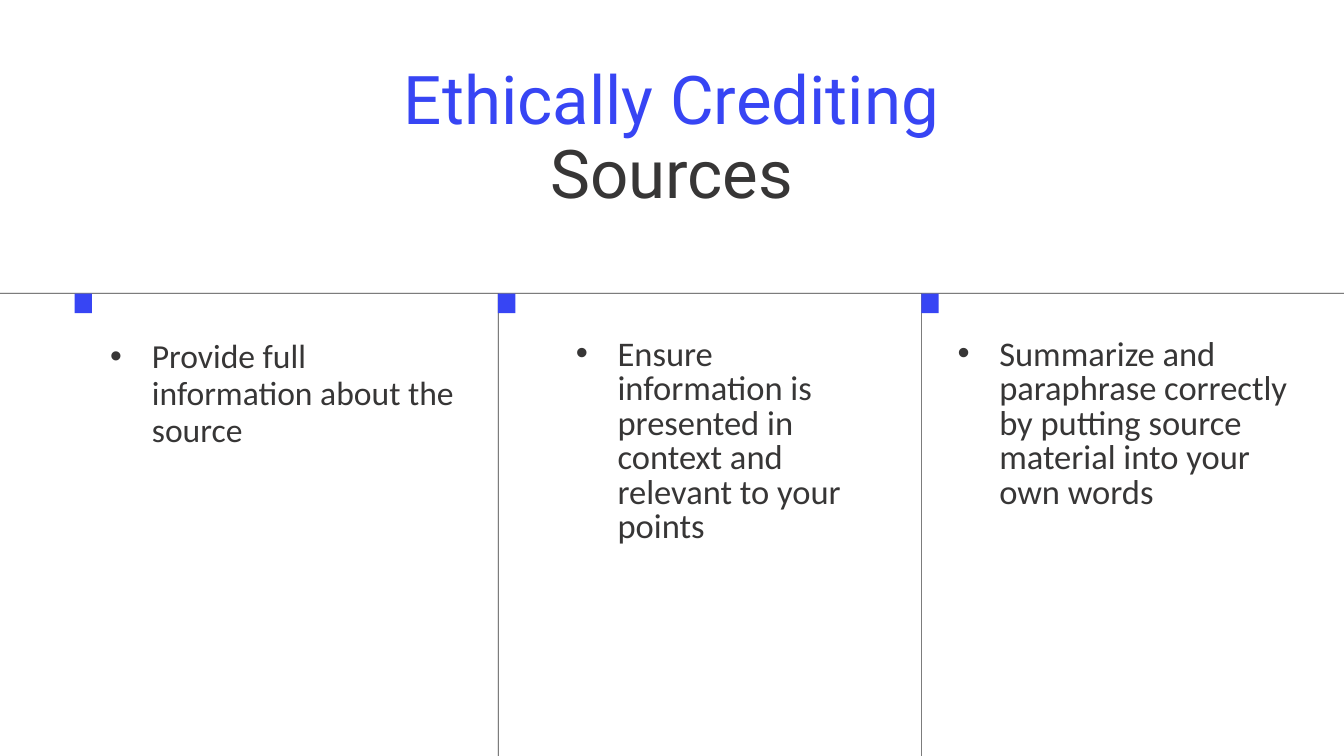
import pptx
import pptx.dml.color
import pptx.enum.shapes
import pptx.enum.text
import pptx.util
from lxml import etree

EMU_PER_PX = 9144
WIDTH, HEIGHT = 2000, 1125
BLUE = pptx.dml.color.RGBColor(0x37, 0x45, 0xF4)
DARK = pptx.dml.color.RGBColor(0x37, 0x36, 0x36)

RULE_TOP = 436
RULE_THICKNESS = 1
COLUMN_TOP = RULE_TOP + RULE_THICKNESS
COLUMN_LEFT, COLUMN_STEP = 111, 630
MARKER_WIDTH, MARKER_HEIGHT = 26, 29
TEXT_TOP = 504
BULLET_INDENT = 62

TITLE_LINES = [("Ethically Crediting", BLUE), ("Sources", DARK)]
POINTS = [
    ("Provide full information about the source", (164, 525, 224), 36, 39.6),
    ("Ensure information is presented in context and relevant to your points",
     (857, 401, 363), 37, 37),
    ("Summarize and paraphrase correctly by putting source material into your own words",
     (1425, 498, 363), 37, 37),
]


def px(length):
    """Turn a length in px into EMU."""
    return pptx.util.Emu(length * EMU_PER_PX)


def add_block(slide, left, top, width, height, color):
    """Add a plain filled rectangle."""
    shape = slide.shapes.add_shape(
        pptx.enum.shapes.MSO_SHAPE.RECTANGLE, px(left), px(top), px(width), px(height))
    shape.shadow.inherit = False
    shape.fill.solid()
    shape.fill.fore_color.rgb = color
    shape.line.fill.background()


def add_bullet(paragraph):
    """Give a paragraph a round bullet with a hanging indent."""
    properties = paragraph._p.get_or_add_pPr()
    properties.set("marL", str(px(BULLET_INDENT)))
    properties.set("indent", str(px(-BULLET_INDENT)))
    namespace = properties.nsmap["a"]
    font = etree.SubElement(properties, f"{{{namespace}}}buFont")
    font.set("typeface", "Arial")
    bullet = etree.SubElement(properties, f"{{{namespace}}}buChar")
    bullet.set("char", "•")


def add_text(slide, lines, left, top, width, height, *, font, size, spacing,
             alignment=pptx.enum.text.PP_ALIGN.LEFT, bulleted=False):
    """Add one paragraph made of (text, color) lines."""
    frame = slide.shapes.add_textbox(px(left), px(top), px(width), px(height)).text_frame
    frame.word_wrap = True
    frame.auto_size = pptx.enum.text.MSO_AUTO_SIZE.SHAPE_TO_FIT_TEXT
    frame.margin_left = frame.margin_right = frame.margin_top = frame.margin_bottom = 0
    paragraph = frame.paragraphs[0]
    paragraph.alignment = alignment
    paragraph.line_spacing = pptx.util.Pt(spacing)
    if bulleted:
        add_bullet(paragraph)
    for index, (text, color) in enumerate(lines):
        if index:
            paragraph.add_line_break()
        run = paragraph.add_run()
        run.text = text
        run.font.name = font
        run.font.size = pptx.util.Pt(size)
        run.font.color.rgb = color


def add_column(slide, index, point):
    """Add a column's divider, marker and bullet point."""
    column_left = COLUMN_LEFT + index * COLUMN_STEP
    if index:
        add_block(slide, column_left, COLUMN_TOP, RULE_THICKNESS, HEIGHT - COLUMN_TOP, DARK)
    add_block(slide, column_left, COLUMN_TOP, MARKER_WIDTH, MARKER_HEIGHT, BLUE)
    text, (left, width, height), size, spacing = point
    add_text(slide, [(text, DARK)], left, TEXT_TOP, width, height,
             font="Calibri", size=size, spacing=spacing, bulleted=True)


def main():
    """Build the slide and save it."""
    presentation = pptx.Presentation()
    presentation.slide_width = px(WIDTH)
    presentation.slide_height = px(HEIGHT)
    slide = presentation.slides.add_slide(presentation.slide_layouts[6])
    add_text(slide, TITLE_LINES, 383, 96, 1233, 222, font="Roboto", size=72,
             spacing=79.2, alignment=pptx.enum.text.PP_ALIGN.CENTER)
    add_block(slide, 0, RULE_TOP, WIDTH, RULE_THICKNESS, DARK)
    for index, point in enumerate(POINTS):
        add_column(slide, index, point)
    presentation.save("out.pptx")


if __name__ == "__main__":
    main()
